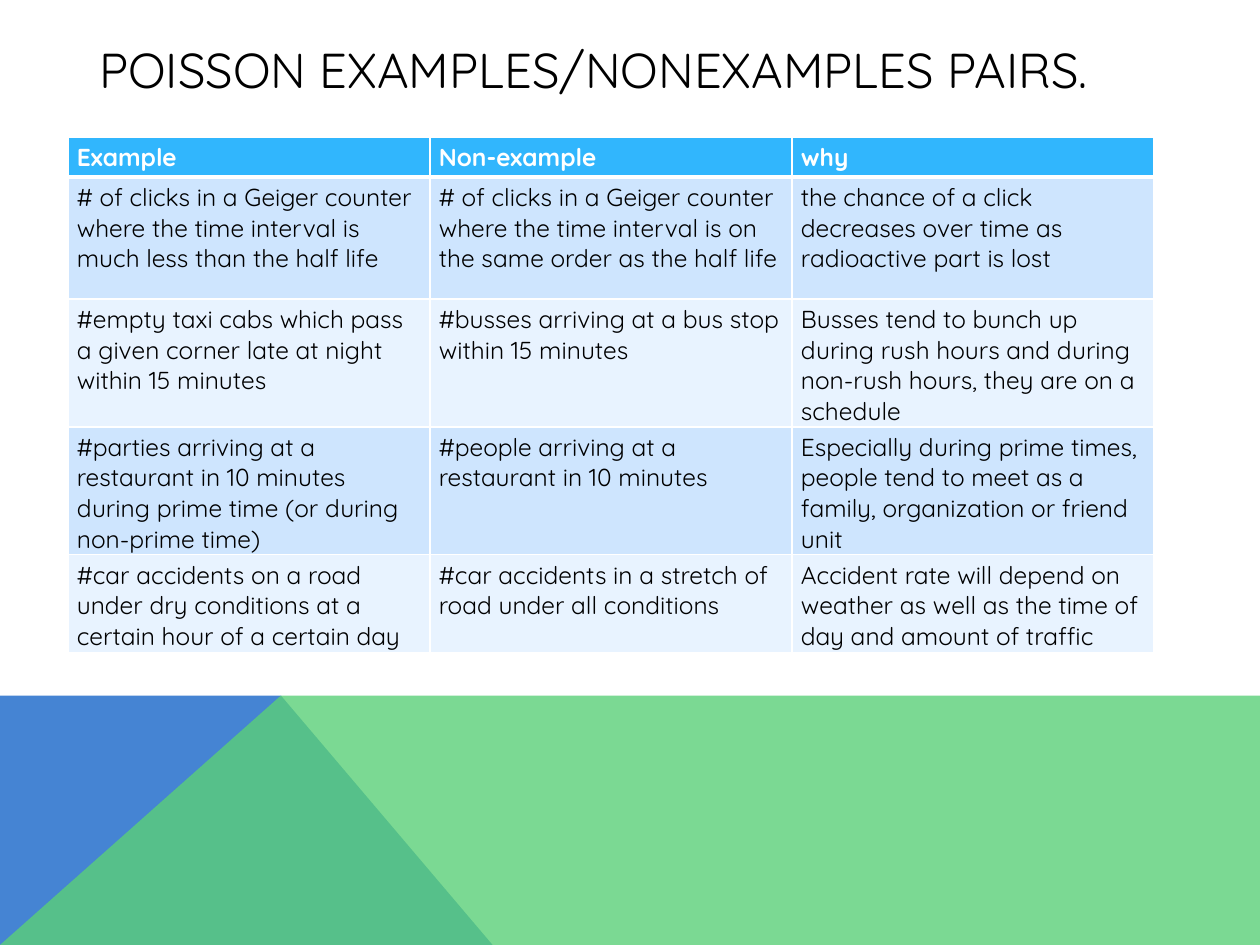
from lxml.etree import SubElement
from pptx import Presentation
from pptx.dml.color import RGBColor
from pptx.enum.text import MSO_ANCHOR
from pptx.oxml import parse_xml
from pptx.oxml.ns import nsdecls, qn
from pptx.util import Inches, Pt

FONT = "Quicksand"
COLORS = {
    "blue": "4584D3",
    "green": "5BD078",
    "header": "31B6FD",
    "band_dark": "CEE5FE",
    "band_light": "E8F3FF",
    "white": "FFFFFF",
    "black": "000000",
}
ROW_HEIGHTS = [0.3, 0.97, 0.97, 0.97, 0.75]
ROWS = [
    ("Example", "Non-example", "why"),
    (
        "# of clicks in a Geiger counter where the time interval is much less than the half life",
        "# of clicks in a Geiger counter where the time interval is on the same order as the half life",
        "the chance of a click decreases over time as radioactive part is lost",
    ),
    (
        "#empty taxi cabs which pass a given corner late at night within 15 minutes",
        "#busses arriving at a bus stop within 15 minutes",
        "Busses tend to bunch up during rush hours and during non-rush hours, they are on a schedule",
    ),
    (
        "#parties arriving at a restaurant in 10 minutes during prime time (or during non-prime time)",
        "#people arriving at a restaurant in 10 minutes",
        "Especially during prime times, people tend to meet as a family, organization or friend unit",
    ),
    (
        "#car accidents on a road under dry conditions at a certain hour of a certain day",
        "#car accidents in a stretch of road under all conditions",
        "Accident rate will depend on weather as well as the time of day and amount of traffic",
    ),
]


def color(name):
    """Return the named colour."""
    return RGBColor.from_string(COLORS[name])


def style_text(paragraph, size, color_name, bold=False):
    """Set the font of a paragraph."""
    font = paragraph.font
    font.name, font.size, font.bold = FONT, Pt(size), bold
    font.color.rgb = color(color_name)


def add_polygon(slide, points, color_name, opacity=100):
    """Draw a closed, filled outline through points in inches."""
    corners = [(Inches(x), Inches(y)) for x, y in points]
    builder = slide.shapes.build_freeform(*corners[0], scale=1.0)
    builder.add_line_segments(corners[1:], close=True)
    shape = builder.convert_to_shape()
    shape.shadow.inherit = False
    shape.line.fill.background()
    shape.fill.solid()
    shape.fill.fore_color.rgb = color(color_name)
    if opacity < 100:
        fill_color = shape.element.spPr.find(qn("a:solidFill"))[0]
        SubElement(fill_color, qn("a:alpha"), val=str(opacity * 1000))


def add_footer(slide, left, top, width, height):
    """Draw the two overlapping slopes along the bottom."""
    right, bottom, peak = left + width, top + height, left + 2.23
    add_polygon(slide, [(left, bottom), (left, top), (peak, top), (left + 3.91, bottom)], "blue")
    add_polygon(slide, [(left, bottom), (peak, top), (right, top), (right, bottom)], "green", 80)


def add_title(slide, left, top, width, height):
    """Write the slide title."""
    box = slide.shapes.add_textbox(Inches(left), Inches(top), Inches(width), Inches(height))
    frame = box.text_frame
    frame.word_wrap = True
    frame.vertical_anchor = MSO_ANCHOR.MIDDLE
    frame.text = "POISSON EXAMPLES/NONEXAMPLES PAIRS."
    style_text(frame.paragraphs[0], 28, "black")


def set_borders(cell, bottom_width):
    """Give a cell white borders, with its own bottom width."""
    properties = cell._tc.get_or_add_tcPr()
    for index, (side, width) in enumerate(zip("LRTB", (1, 1, 1, bottom_width))):
        properties.insert(index, parse_xml(
            f'<a:ln{side} {nsdecls("a")} w="{Pt(width)}"><a:solidFill>'
            f'<a:srgbClr val="{COLORS["white"]}"/></a:solidFill></a:ln{side}>'
        ))


def add_pairs_table(slide, left, top, width):
    """Build the table of examples, non-examples and reasons."""
    frame = slide.shapes.add_table(
        len(ROWS), len(ROWS[0]), Inches(left), Inches(top), Inches(width), Inches(sum(ROW_HEIGHTS))
    )
    table = frame.table
    for index, (texts, height) in enumerate(zip(ROWS, ROW_HEIGHTS)):
        is_header = index == 0
        fill_name = "header" if is_header else "band_dark" if index % 2 else "band_light"
        table.rows[index].height = Inches(height)
        for cell, text in zip(table.rows[index].cells, texts):
            cell.text = text
            cell.margin_left = cell.margin_right = Inches(0.07)
            cell.margin_top = cell.margin_bottom = Inches(0.04)
            style_text(cell.text_frame.paragraphs[0], 14, "white" if is_header else "black", is_header)
            cell.fill.solid()
            cell.fill.fore_color.rgb = color(fill_name)
            set_borders(cell, 3 if is_header else 1)


def main():
    """Build and save the slide."""
    presentation = Presentation()
    presentation.slide_width, presentation.slide_height = Inches(10), Inches(7.5)
    slide = presentation.slides.add_slide(presentation.slide_layouts[6])
    add_footer(slide, 0, 5.52, 10, 1.98)
    add_title(slide, 0.69, 0, 8.62, 1.09)
    add_pairs_table(slide, 0.54, 1.09, 8.62)
    presentation.save("out.pptx")


if __name__ == "__main__":
    main()
